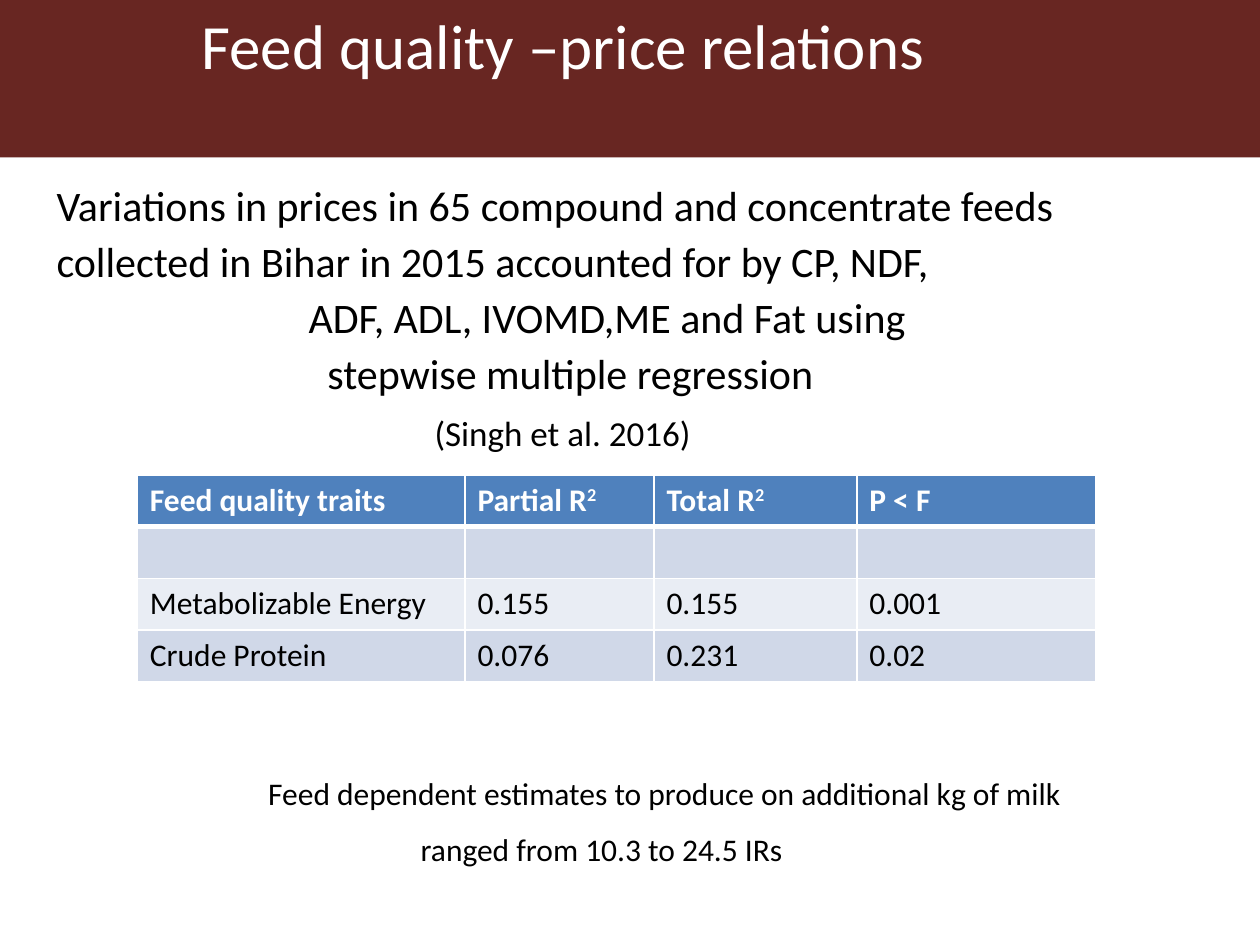
from lxml.etree import SubElement
from pptx import Presentation
from pptx.dml.color import RGBColor
from pptx.enum.shapes import MSO_SHAPE
from pptx.enum.text import MSO_ANCHOR, MSO_AUTO_SIZE, PP_ALIGN
from pptx.oxml.ns import qn
from pptx.util import Inches, Pt

MAROON, BLUE, WHITE, BLACK = "682622", "4F81BD", "FFFFFF", "000000"
BANDS = ["D0D8E8", "E9EDF4"]


def color(value):
    return RGBColor.from_string(value)


def apply(target, values):
    for name, value in values.items():
        setattr(target, name, value)


class SlideBuilder:
    """Holds the current slide and the style shared by its elements."""

    font = "Calibri"

    def __init__(self, page):
        self.page = page

    def span(self, para, text, size, fill=BLACK, bold=False):
        span = para.add_run()
        span.text = text
        apply(span.font, {"name": self.font, "size": Pt(size), "bold": bold})
        span.font.color.rgb = color(fill)
        return span

    def indent(self, para, left=0, first=0):
        properties = para._p.get_or_add_pPr()
        properties.set("marL", str(Inches(left)))
        properties.set("indent", str(Inches(first)))

    def place(self, shape, left, top, width, height):
        apply(shape, {"left": Inches(left), "top": Inches(top),
                      "width": Inches(width), "height": Inches(height)})

    def band(self, left, top, width, height, fill):
        """Add a plain rectangle behind everything else."""
        band = self.page.shapes.add_shape(
            MSO_SHAPE.RECTANGLE, *map(Inches, (left, top, width, height)))
        band.shadow.inherit = False
        band.fill.solid()
        band.fill.fore_color.rgb = color(fill)
        band.line.fill.background()
        self.page.shapes._spTree.insert(2, band._element)

    def title(self, text, bounds, size, left):
        title = self.page.shapes.title
        self.place(title, *bounds)
        apply(title.text_frame, {"vertical_anchor": MSO_ANCHOR.TOP, "word_wrap": True,
                                 "auto_size": MSO_AUTO_SIZE.NONE})
        para = title.text_frame.paragraphs[0]
        para.alignment = PP_ALIGN.LEFT
        self.indent(para, left)
        self.span(para, text, size, WHITE)

    def text(self, bounds, lines, align=PP_ALIGN.LEFT):
        """Add a text box; each line is (text, size, left indent, first-line indent)."""
        box = self.page.shapes.add_textbox(*map(Inches, bounds))
        frame = box.text_frame
        apply(frame, {"word_wrap": True, "auto_size": MSO_AUTO_SIZE.SHAPE_TO_FIT_TEXT})
        for number, (text, size, left, first) in enumerate(lines):
            para = frame.add_paragraph() if number else frame.paragraphs[0]
            apply(para, {"alignment": align, "line_spacing": Pt(32)})
            self.indent(para, left, first)
            self.span(para, text, size)

    def borders(self, cell, widths):
        """Draw white cell borders; widths are points for left, right, top, bottom."""
        properties = cell._tc.get_or_add_tcPr()
        for side, width in zip("LRTB", widths):
            line = SubElement(properties, qn(f"a:ln{side}"), w=str(Pt(width)))
            fill = SubElement(line, qn("a:solidFill"))
            SubElement(fill, qn("a:srgbClr"), val=WHITE)

    def table(self, left, top, columns, row_height, rows, size):
        """Add a banded table; a ^ in a cell starts a superscript."""
        table = self.page.shapes.add_table(
            len(rows), len(columns), Inches(left), Inches(top),
            Inches(sum(columns)), Inches(row_height * len(rows))).table
        for column, width in zip(table.columns, columns):
            column.width = Inches(width)
        for r, row in enumerate(rows):
            table.rows[r].height = Inches(row_height)
            header = r == 0
            for c, text in enumerate(row):
                cell = table.cell(r, c)
                self.borders(cell, (1, 1, 3 if r == 1 else 1, 3 if header else 1))
                cell.fill.solid()
                cell.fill.fore_color.rgb = color(BLUE if header else BANDS[(r - 1) % 2])
                para = cell.text_frame.paragraphs[0]
                para.font.size = Pt(size)
                base, _, raised = text.partition("^")
                style = (size, WHITE if header else BLACK, header)
                if base:
                    self.span(para, base, *style)
                if raised:
                    span = self.span(para, raised, *style)
                    span.font._element.set("baseline", "30000")


def main():
    deck = Presentation()
    apply(deck, {"slide_width": Inches(10), "slide_height": Inches(7.5)})
    slide = SlideBuilder(deck.slides.add_slide(deck.slide_layouts[5]))

    slide.band(0, 0, 10, 1.25, MAROON)
    slide.title("Feed quality –price relations", (0.5, 0, 9.15, 1.25), 36, left=1)
    slide.text((0.35, 1.33, 9.21, 2.34), [
        ("Variations in prices in 65 compound and concentrate feeds "
         "collected in Bihar in 2015 accounted for by CP, NDF,", 24, 0, 0),
        ("ADF, ADL, IVOMD,ME and Fat using", 24, 2, 0),
        ("stepwise multiple regression", 24, 2.15, 0),
        ("(Singh et al. 2016)", 20, 3, 0),
    ])
    slide.table(1.09, 3.77, [2.6, 1.5, 1.61, 1.9], 0.41, [
        ["Feed quality traits", "Partial R^2", "Total R^2", "P < F"],
        [""] * 4,
        ["Metabolizable Energy", "0.155", "0.155", "0.001"],
        ["Crude Protein", "0.076", "0.231", "0.02"],
    ], 18)
    slide.text((0.83, 5.95, 7.89, 0.95), [
        ("Feed dependent estimates to produce on additional kg of milk "
         "ranged from 10.3 to 24.5 IRs", 18, 0, 1),
    ], PP_ALIGN.CENTER)

    deck.save("out.pptx")


if __name__ == "__main__":
    main()
